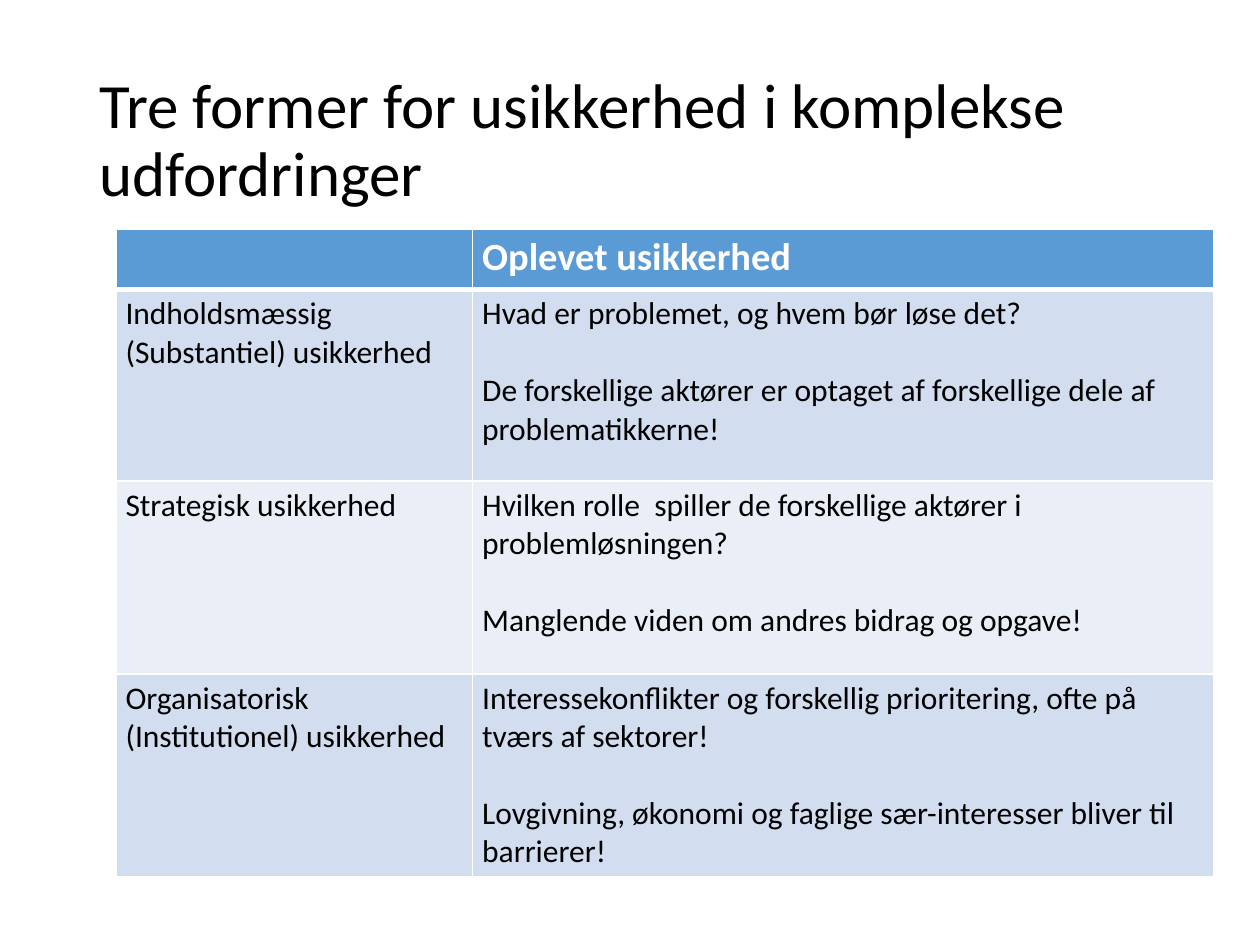
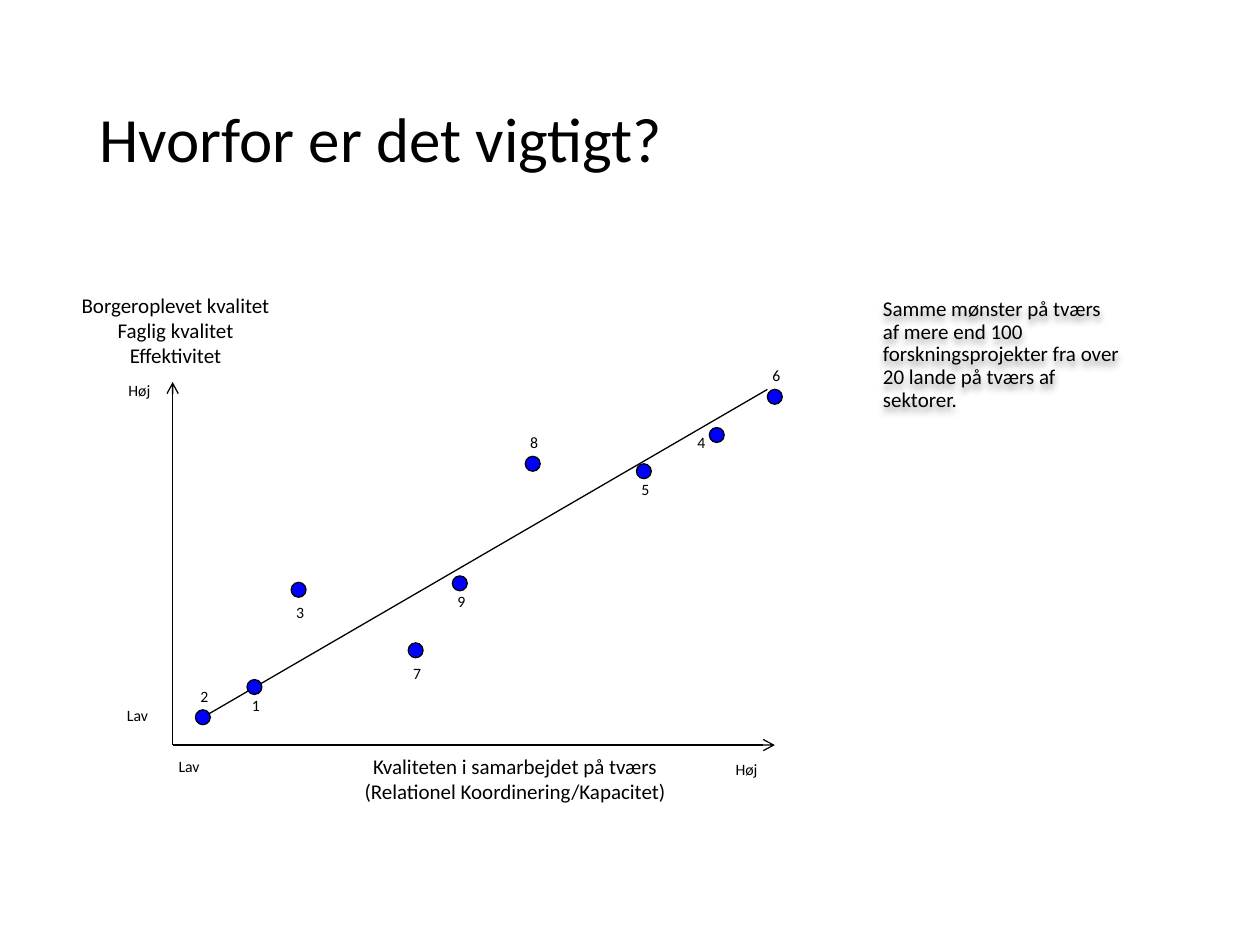
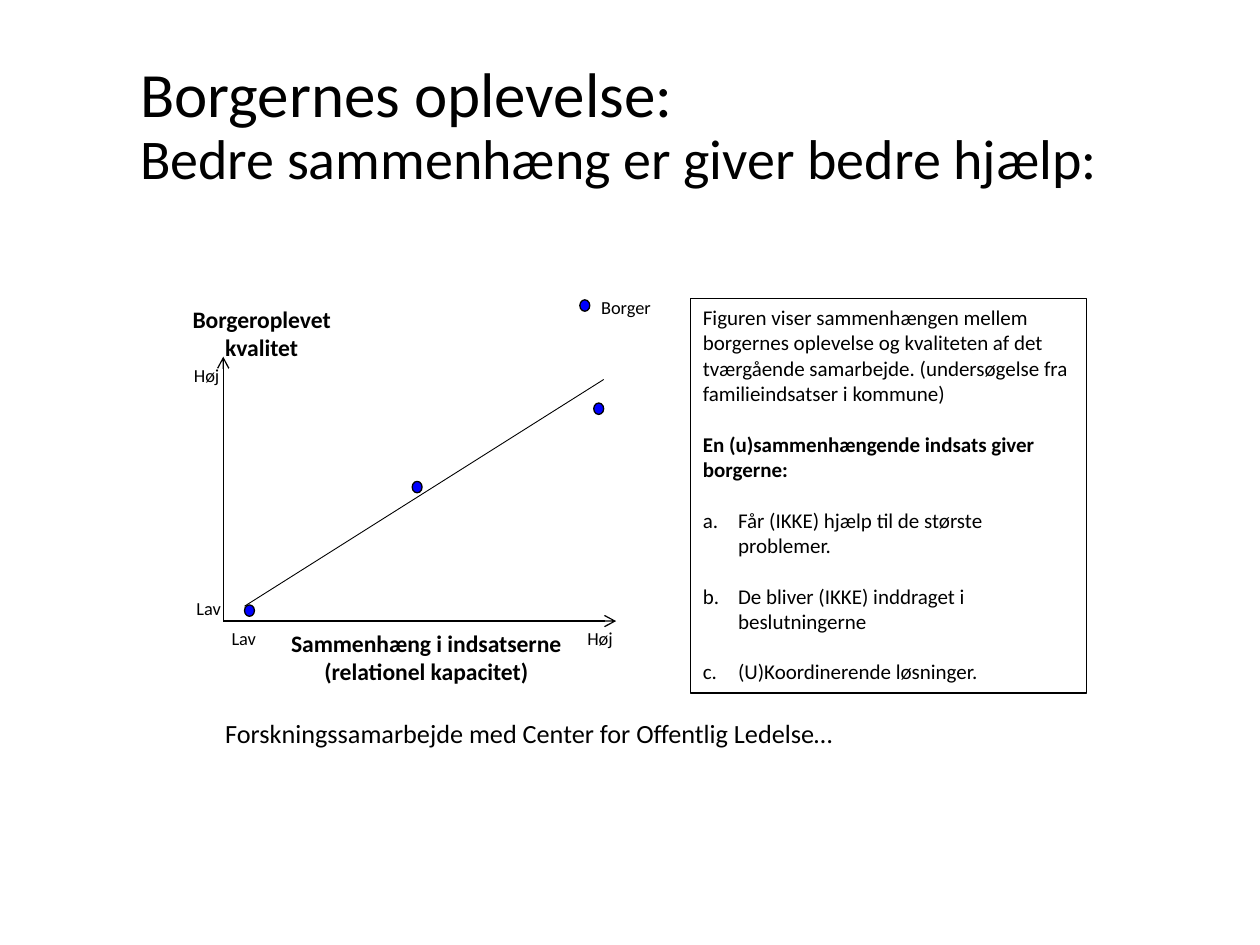
from collections import namedtuple

from lxml.etree import SubElement
from pptx import Presentation
from pptx.dml.color import RGBColor
from pptx.enum.shapes import MSO_CONNECTOR, MSO_SHAPE
from pptx.enum.text import MSO_ANCHOR, MSO_AUTO_SIZE, PP_ALIGN
from pptx.oxml.ns import qn
from pptx.util import Cm, Pt

FONT = "Calibri"
BLACK = RGBColor(0x00, 0x00, 0x00)
WHITE = RGBColor(0xFF, 0xFF, 0xFF)
DOT_BLUE = RGBColor(0x00, 0x00, 0xFF)
HEADER_BLUE = RGBColor(0x5B, 0x9B, 0xD5)
BAND_DARK = RGBColor(0xD2, 0xDE, 0xEF)
BAND_LIGHT = RGBColor(0xEA, 0xEF, 0xF7)

Box = namedtuple("Box", "left top width height")
Label = namedtuple("Label", "text left top width height")

TITLE_BOX = Box(1.75, 1.02, 21.9, 3.68)
BELOW, FAR_BELOW = (-0.3, 0.05), (-0.3, 0.14)
ABOVE, BESIDE = (-0.3, -0.75), (-0.64, -0.18)


def in_cm(box):
    """Return the four measures of a box as lengths."""
    return [Cm(value) for value in box]


def write_text(paragraph, text, size=12, bold=False, color=BLACK,
               align=PP_ALIGN.LEFT, line_spacing=None, space_before=0):
    """Append a formatted run to a paragraph and format the paragraph."""
    paragraph.alignment = align
    paragraph.line_spacing = line_spacing
    paragraph.space_before = Pt(space_before)
    run = paragraph.add_run()
    run.text = text
    run.font.name = FONT
    run.font.size = Pt(size)
    run.font.bold = bold
    run.font.color.rgb = color


def write_paragraphs(frame, texts, gap=0, **text_format):
    """Fill an empty text frame with paragraphs separated by an equal gap."""
    for index, text in enumerate(texts):
        paragraph = frame.add_paragraph() if index else frame.paragraphs[0]
        write_text(paragraph, text, space_before=gap if index else 0, **text_format)


def add_title_slide(presentation, title_lines, box=TITLE_BOX):
    """Add a title-only slide whose title is given as (text, size) lines."""
    slide = presentation.slides.add_slide(presentation.slide_layouts[5])
    title = slide.shapes.title
    title.left, title.top, title.width, title.height = in_cm(box)
    frame = title.text_frame
    frame.auto_size = MSO_AUTO_SIZE.NONE
    frame.vertical_anchor = MSO_ANCHOR.MIDDLE
    paragraph = frame.paragraphs[0]
    for index, (text, size) in enumerate(title_lines):
        if index:
            paragraph.add_line_break()
            SubElement(paragraph._p[-1], qn("a:rPr"), sz=str(size * 100))
        write_text(paragraph, text, size=size, line_spacing=0.9)
    return slide


def add_label(slide, box, texts, wrap=False, **text_format):
    """Add a text box that fits its paragraphs."""
    label = slide.shapes.add_textbox(*in_cm(box))
    label.text_frame.word_wrap = wrap
    label.text_frame.auto_size = MSO_AUTO_SIZE.SHAPE_TO_FIT_TEXT
    write_paragraphs(label.text_frame, texts, **text_format)
    return label


def add_line(slide, start, end, width=0.75, arrow=False):
    """Draw a black line between two points, optionally with an arrowhead."""
    line = slide.shapes.add_connector(
        MSO_CONNECTOR.STRAIGHT, *in_cm(start), *in_cm(end))
    line.line.color.rgb = BLACK
    line.line.width = Pt(width)
    if arrow:
        SubElement(line.line._get_or_add_ln(), qn("a:tailEnd"), type="arrow")
    SubElement(line._element.spPr, qn("a:effectLst"))


def add_dot(slide, center, size):
    """Draw a blue data point around its centre."""
    (x, y), (width, height) = center, size
    dot = slide.shapes.add_shape(
        MSO_SHAPE.OVAL, *in_cm((x - width / 2, y - height / 2, width, height)))
    dot.shadow.inherit = False
    dot.fill.solid()
    dot.fill.fore_color.rgb = DOT_BLUE
    dot.line.color.rgb = BLACK
    dot.line.width = Pt(0.75)


def add_scatter(slide, box, trend, trend_width, points, dot_size,
                end_labels, label_size):
    """Draw axes, trend line, points and axis end labels inside a box."""
    def place(point):
        return box.left + point[0], box.top + point[1]

    origin = place((0, box.height))
    add_line(slide, origin, place((0, 0)), arrow=True)
    add_line(slide, origin, place((box.width, box.height)), arrow=True)
    add_line(slide, place(trend[0]), place(trend[1]), width=trend_width)
    for point in points:
        add_dot(slide, place(point), dot_size)
    for label in end_labels:
        add_box_label(slide, box, label, size=label_size)


def add_box_label(slide, box, label, **text_format):
    """Add a label placed relative to the corner of a box."""
    target = Box(box.left + label.left, box.top + label.top, label.width, label.height)
    add_label(slide, target, label.text.split("\n"), **text_format)


def format_cell(cell, fill, top_width, bottom_width):
    """Give a table cell its margins, fill and white borders."""
    cell.margin_left = cell.margin_right = Cm(0.19)
    cell.margin_top = cell.margin_bottom = Cm(0.1)
    cell.fill.solid()
    cell.fill.fore_color.rgb = fill
    properties = cell._tc.get_or_add_tcPr()
    borders = {"L": 1, "R": 1, "T": top_width, "B": bottom_width}
    for index, (side, width) in enumerate(borders.items()):
        border = SubElement(properties, qn(f"a:ln{side}"), w=str(Pt(width)))
        color = SubElement(SubElement(border, qn("a:solidFill")), qn("a:srgbClr"))
        color.set("val", str(WHITE))
        properties.insert(index, border)


def add_uncertainty_table(slide, box, rows, column_widths, row_heights):
    """Add the banded table with its header row."""
    table = slide.shapes.add_table(len(rows), len(column_widths), *in_cm(box)).table
    for column, width in zip(table.columns, column_widths):
        column.width = Cm(width)
    for row_index, (texts, height) in enumerate(zip(rows, row_heights)):
        table.rows[row_index].height = Cm(height)
        header = row_index == 0
        band = BAND_DARK if row_index % 2 else BAND_LIGHT
        for column_index, text in enumerate(texts):
            cell = table.cell(row_index, column_index)
            format_cell(cell, HEADER_BLUE if header else band,
                        3 if row_index == 1 else 1, 3 if header else 1)
            if text:
                write_paragraphs(cell.text_frame, text.split("\n"), gap=22,
                                 size=22 if header else 18, bold=header,
                                 color=WHITE if header else BLACK)


def add_text_shadow(label):
    """Give the text of an unfilled box a soft shadow."""
    effects = SubElement(label._element.spPr, qn("a:effectLst"))
    shadow = SubElement(effects, qn("a:outerShdw"), blurRad="50800",
                        dist="38100", dir="5400000", algn="t", rotWithShape="0")
    color = SubElement(shadow, qn("a:srgbClr"), val=str(BLACK))
    SubElement(color, qn("a:alpha"), val="40000")


def add_findings_panel(slide, box, intro, heading, findings):
    """Add the framed explanation with its lettered list."""
    panel = slide.shapes.add_shape(MSO_SHAPE.RECTANGLE, *in_cm(box))
    panel.shadow.inherit = False
    panel.fill.background()
    panel.line.color.rgb = BLACK
    panel.line.width = Pt(0.75)
    frame = panel.text_frame
    frame.word_wrap = True
    frame.vertical_anchor = MSO_ANCHOR.TOP
    write_paragraphs(frame, [intro])
    gap = 14.6
    write_text(frame.add_paragraph(), heading, bold=True, space_before=gap)
    for finding in findings:
        paragraph = frame.add_paragraph()
        write_text(paragraph, finding, space_before=gap)
        properties = paragraph._p.get_or_add_pPr()
        properties.set("marL", str(Cm(0.71)))
        properties.set("indent", str(-Cm(0.71)))
        SubElement(properties, qn("a:buFont"), typeface="+mj-lt")
        SubElement(properties, qn("a:buAutoNum"), type="alphaLcPeriod")


def build_uncertainty_slide(presentation):
    """Build the slide with the three forms of uncertainty."""
    slide = add_title_slide(
        presentation, [("Tre former for usikkerhed i komplekse udfordringer", 36)])
    rows = [
        ("", "Oplevet usikkerhed"),
        ("Indholdsmæssig (Substantiel) usikkerhed",
         "Hvad er problemet, og hvem bør løse det?\n"
         "De forskellige aktører er optaget af forskellige dele af problematikkerne!"),
        ("Strategisk usikkerhed",
         "Hvilken rolle  spiller de forskellige aktører i problemløsningen?\n"
         "Manglende viden om andres bidrag og opgave!"),
        ("Organisatorisk (Institutionel) usikkerhed",
         "Interessekonflikter og forskellig prioritering, ofte på tværs af sektorer!\n"
         "Lovgivning, økonomi og faglige sær-interesser bliver til barrierer!"),
    ]
    add_uncertainty_table(slide, Box(2.34, 4.62, 22.13, 12.78), rows,
                          [7.19, 14.94], [1.22, 3.86, 3.89, 3.81])


def build_importance_slide(presentation):
    """Build the slide relating collaboration to quality."""
    slide = add_title_slide(presentation, [("Hvorfor er det vigtigt?", 36)])
    box = Box(3.48, 7.7, 12.14, 7.32)
    points = {
        "6": (12.14, 0.3, ABOVE), "4": (10.97, 1.07, BESIDE),
        "5": (9.5, 1.8, BELOW), "8": (7.26, 1.65, ABOVE),
        "9": (5.79, 4.06, BELOW), "7": (4.9, 5.41, FAR_BELOW),
        "3": (2.54, 4.19, FAR_BELOW), "1": (1.65, 6.15, BELOW),
        "2": (0.61, 6.76, ABOVE),
    }
    end_labels = [Label("Høj", -1.14, -0.15, 0.97, 0.64),
                  Label("Lav", -1.17, 6.4, 0.94, 0.64),
                  Label("Lav", -0.13, 7.44, 0.94, 0.64),
                  Label("Høj", 11.1, 7.49, 0.97, 0.64)]
    add_scatter(slide, box, [(0.61, 6.76), (11.99, 0.15)], 0.75,
                [(x, y) for x, y, offset in points.values()], (0.3, 0.3),
                end_labels, 9)
    for number, (x, y, offset) in points.items():
        label = Label(number, x + offset[0], y + offset[1], 0.69, 0.64)
        add_box_label(slide, box, label, size=9)
    for label in (
        Label("Kvaliteten i samarbejdet på tværs\n(Relationel Koordinering/Kapacitet)",
              3.58, 7.37, 6.65, 1.27),
        Label("Borgeroplevet kvalitet\nFaglig kvalitet\nEffektivitet",
              -2.11, -1.93, 4.34, 1.8),
    ):
        add_box_label(slide, box, label, align=PP_ALIGN.CENTER)
    note = add_label(
        slide, Box(17.55, 5.89, 5.28, 2.57),
        ["Samme mønster på tværs af mere end 100 forskningsprojekter "
         "fra over 20 lande på tværs af sektorer."],
        wrap=True, line_spacing=0.9)
    add_text_shadow(note)


def build_citizen_slide(presentation):
    """Build the slide on how citizens experience coherence."""
    slide = add_title_slide(
        presentation,
        [("Borgernes oplevelse: ", 36), ("Bedre sammenhæng er giver bedre hjælp:", 32)],
        Box(2.57, 1.75, 20.12, 1.63))
    box = Box(4.5, 7.19, 7.92, 5.33)
    end_labels = [Label("Høj", -0.84, 0.03, 1.04, 0.71),
                  Label("Lav", -0.79, 4.72, 1.02, 0.71),
                  Label("Lav", -0.08, 5.33, 1.02, 0.71),
                  Label("Høj", 7.09, 5.33, 1.04, 0.71),
                  Label("Borger", 7.37, -1.35, 1.55, 0.71)]
    points = [(0.53, 5.12), (3.91, 2.63), (7.57, 1.05), (7.29, -1.03)]
    add_scatter(slide, box, [(0.43, 5.03), (7.67, 0.46)], 0.5, points,
                (0.2, 0.23), end_labels, 10.5)
    for label in (
        Label("Sammenhæng i indsatserne\n(relationel kapacitet)", 1.07, 5.36, 6.05, 1.42),
        Label("Borgeroplevet\nkvalitet", -0.89, -1.17, 3.33, 1.42),
    ):
        add_box_label(slide, box, label, size=13.5, bold=True, align=PP_ALIGN.CENTER)
    add_label(slide, Box(4.29, 14.33, 12.9, 0.89),
              ["Forskningssamarbejde med Center for Offentlig Ledelse…"], size=15)
    add_findings_panel(
        slide, Box(13.92, 6.02, 7.98, 7.95),
        "Figuren viser sammenhængen mellem borgernes oplevelse og kvaliteten af det "
        "tværgående samarbejde. (undersøgelse fra familieindsatser i kommune)",
        "En (u)sammenhængende indsats giver borgerne:",
        ["Får (IKKE) hjælp til de største problemer.",
         "De bliver (IKKE) inddraget i beslutningerne",
         "(U)Koordinerende løsninger."])


def main():
    """Build and save the presentation."""
    presentation = Presentation()
    presentation.slide_width = Cm(25.4)
    presentation.slide_height = Cm(19.05)
    build_uncertainty_slide(presentation)
    build_importance_slide(presentation)
    build_citizen_slide(presentation)
    presentation.save("out.pptx")


if __name__ == "__main__":
    main()
